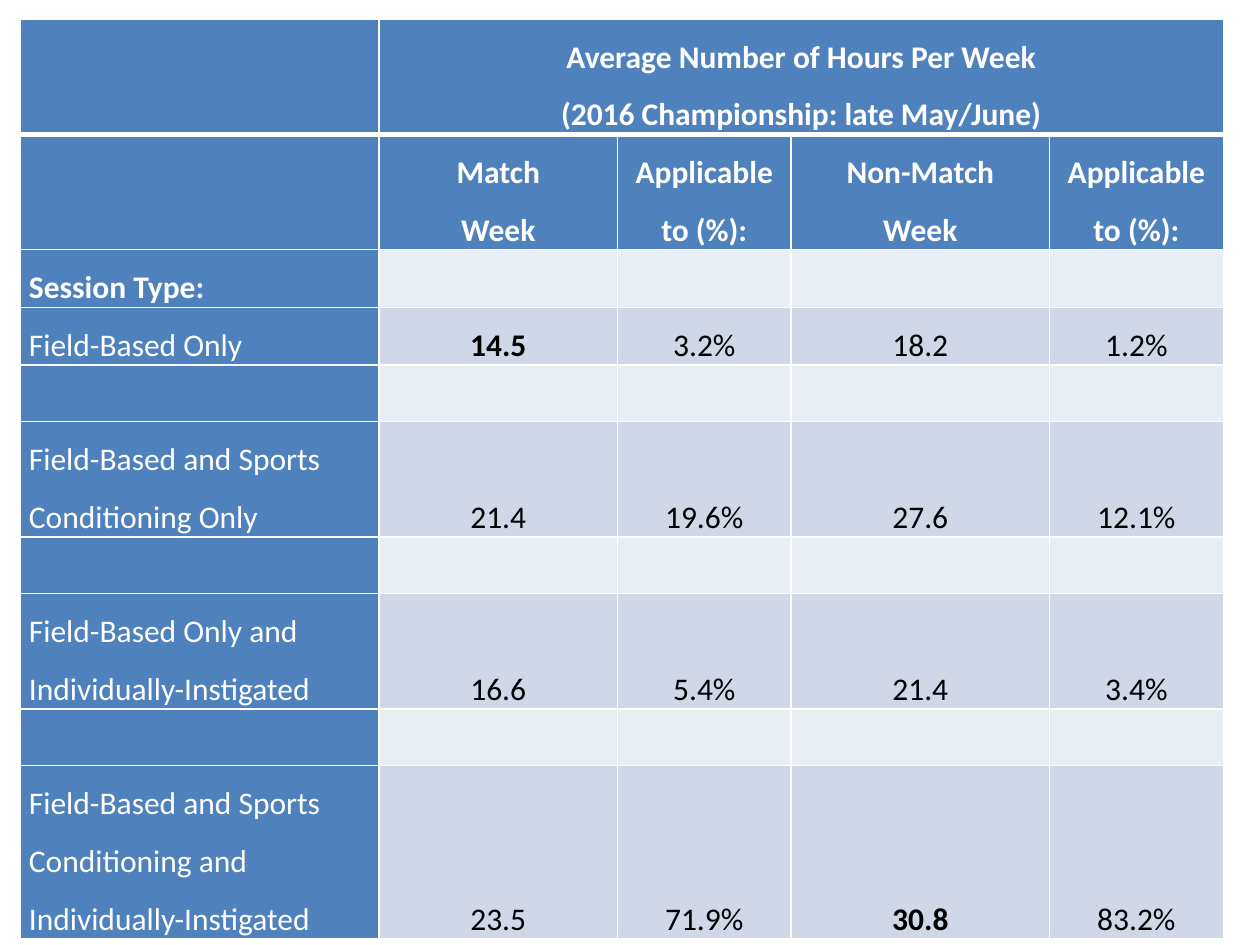
import dataclasses

import lxml.etree
import pptx
import pptx.dml.color
import pptx.enum.text
import pptx.oxml.ns
import pptx.util


@dataclasses.dataclass(frozen=True)
class Theme:
    font: str = "Calibri"
    size: int = 18
    line_spacing: float = 1.5
    header_fill: str = "4F81BD"
    band_fills: tuple = ("E9EDF4", "D0D8E8")
    light_text: str = "FFFFFF"
    dark_text: str = "000000"
    border: str = "FFFFFF"
    thin: int = 1
    thick: int = 3


THEME = Theme()
COLUMN_WIDTHS = (2.85, 1.89, 1.38, 2.05, 1.38)
LINE_HEIGHT = 0.45
HEADER_ROWS = 2
BLANK = ("",) * 5
# Each row: number of text lines, then the cells; "\n" starts a paragraph.
ROWS = (
    (2, ("", "Average Number of Hours Per Week\n(2016 Championship: late May/June)", "", "", "")),
    (2, ("", "Match\nWeek", "Applicable\nto (%):", "Non-Match\nWeek", "Applicable\nto (%):")),
    (1, ("Session Type:", "", "", "", "")),
    (1, ("Field-Based Only", "14.5", "3.2%", "18.2", "1.2%")),
    (1, BLANK),
    (2, ("Field-Based and Sports Conditioning Only", "21.4", "19.6%", "27.6", "12.1%")),
    (1, BLANK),
    (2, ("Field-Based Only and Individually-Instigated", "16.6", "5.4%", "21.4", "3.4%")),
    (1, BLANK),
    (3, ("Field-Based and Sports Conditioning and Individually-Instigated",
         "23.5", "71.9%", "30.8", "83.2%")),
)
BOLD_BODY = ("Session Type:", "14.5", "30.8")


def rgb(value):
    return pptx.dml.color.RGBColor.from_string(value)


def set_borders(cell, top, bottom):
    """Draw all four cell edges; top and bottom are widths in points."""
    properties = cell._tc.get_or_add_tcPr()
    widths = {"L": THEME.thin, "R": THEME.thin, "T": top, "B": bottom}
    for side, width in widths.items():
        line = lxml.etree.SubElement(properties, pptx.oxml.ns.qn(f"a:ln{side}"),
                                     w=str(pptx.util.Pt(width)))
        fill = lxml.etree.SubElement(line, pptx.oxml.ns.qn("a:solidFill"))
        lxml.etree.SubElement(fill, pptx.oxml.ns.qn("a:srgbClr"), val=THEME.border)


def write_cell(cell, text, color, bold, centered):
    cell.margin_left = cell.margin_right = pptx.util.Inches(0.07)
    cell.margin_top = cell.margin_bottom = 0
    for index, line in enumerate(text.split("\n")):
        frame = cell.text_frame
        para = frame.add_paragraph() if index else frame.paragraphs[0]
        para.line_spacing = THEME.line_spacing
        if centered:
            para.alignment = pptx.enum.text.PP_ALIGN.CENTER
        if line:
            span = para.add_run()
            span.text = line
            span.font.name = THEME.font
            span.font.size = pptx.util.Pt(THEME.size)
            span.font.bold = bold
            span.font.color.rgb = rgb(color)


def format_cell(cell, row, column, text):
    is_header = row < HEADER_ROWS or column == 0
    set_borders(cell,
                THEME.thick if row == 1 else THEME.thin,
                THEME.thick if row == 0 else THEME.thin)
    cell.fill.solid()
    cell.fill.fore_color.rgb = rgb(THEME.header_fill if is_header else THEME.band_fills[row % 2])
    if row > 0:
        cell.vertical_anchor = pptx.enum.text.MSO_ANCHOR.BOTTOM
    write_cell(cell, text,
               THEME.light_text if is_header else THEME.dark_text,
               row < HEADER_ROWS or text in BOLD_BODY,
               column > 0)


def add_hours_table(page):
    height = LINE_HEIGHT * sum(lines for lines, _ in ROWS)
    table = page.shapes.add_table(
        len(ROWS), len(COLUMN_WIDTHS),
        pptx.util.Inches(0.16), pptx.util.Inches(0.15),
        pptx.util.Inches(sum(COLUMN_WIDTHS)), pptx.util.Inches(height)).table
    for column, width in zip(table.columns, COLUMN_WIDTHS):
        column.width = pptx.util.Inches(width)
    for row, (lines, texts) in enumerate(ROWS):
        table.rows[row].height = pptx.util.Inches(lines * LINE_HEIGHT)
        for column, text in enumerate(texts):
            format_cell(table.cell(row, column), row, column, text)
    table.cell(0, 1).merge(table.cell(0, len(COLUMN_WIDTHS) - 1))


def main():
    deck = pptx.Presentation()
    deck.slide_width = pptx.util.Inches(10)
    deck.slide_height = pptx.util.Inches(7.5)
    page = deck.slides.add_slide(deck.slide_layouts[6])
    add_hours_table(page)
    deck.save("out.pptx")


if __name__ == "__main__":
    main()
